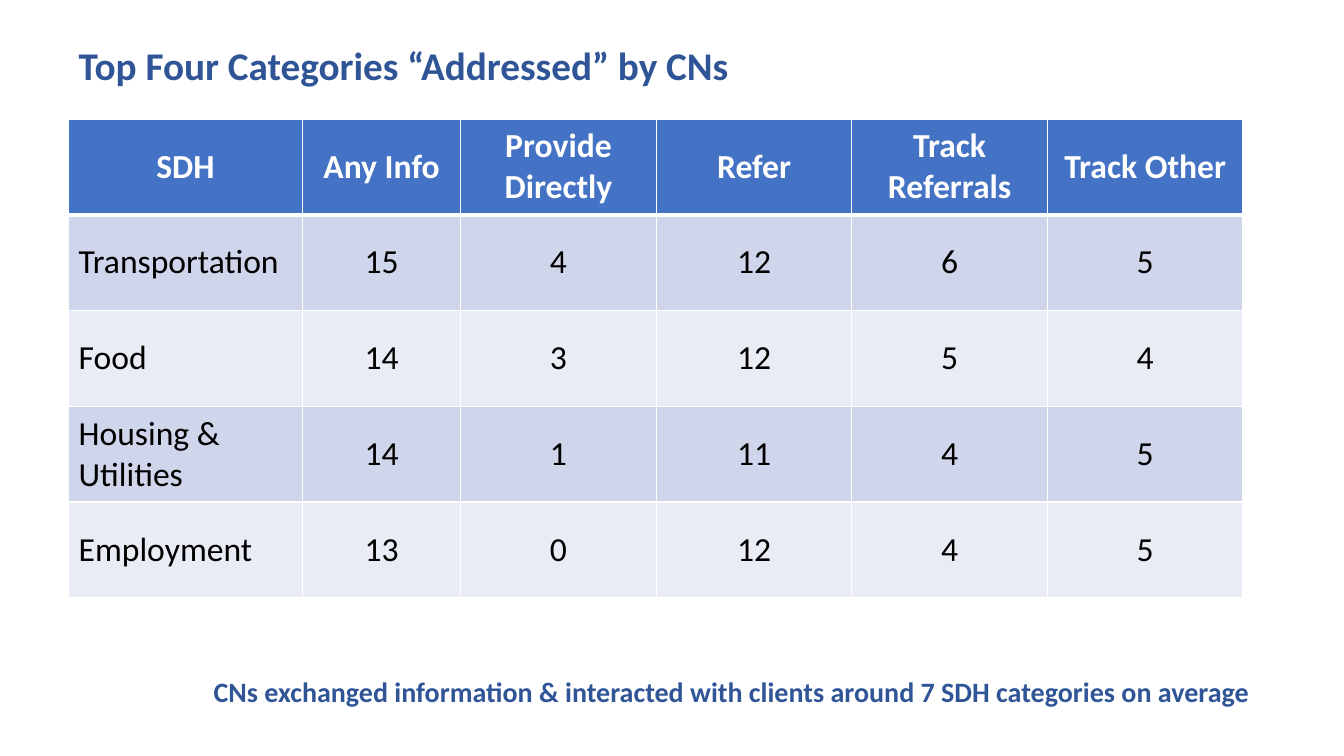
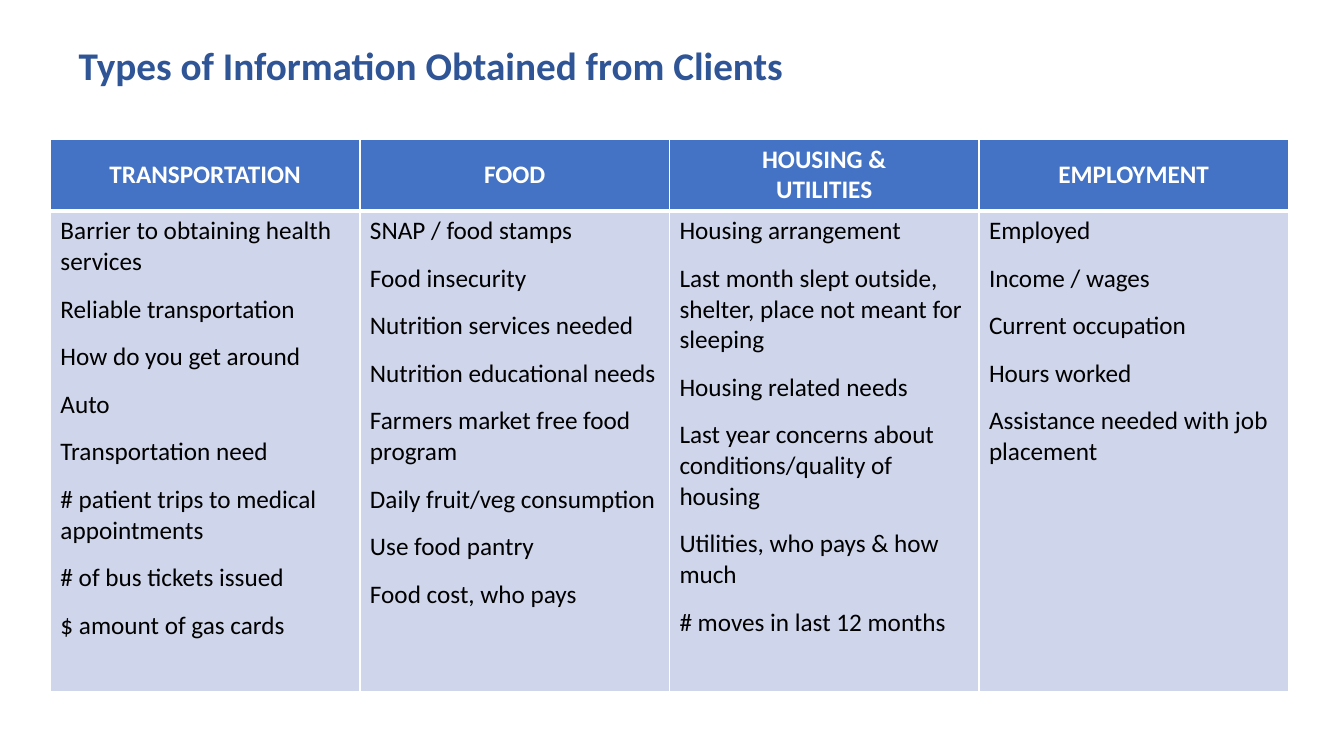
from dataclasses import dataclass

from lxml.etree import SubElement
from pptx import Presentation
from pptx.dml.color import RGBColor
from pptx.enum.text import MSO_ANCHOR, PP_ALIGN
from pptx.oxml.ns import qn
from pptx.util import Inches, Pt


@dataclass(frozen=True)
class Theme:
    """Colours, font and type sizes shared by the slides."""
    font: str = "Calibri"
    heading: str = "2F5597"
    header: str = "4472C4"
    bands: tuple = ("CFD5EA", "E9EBF5")
    ink: str = "000000"
    white: str = "FFFFFF"
    title_size: int = 28
    caption_size: int = 20
    count_size: int = 24
    detail_size: int = 18
    rule: int = 1
    header_rule: int = 3


THEME = Theme()

COUNT_HEADERS = ("SDH", "Any Info", "Provide Directly", "Refer",
                 "Track Referrals", "Track Other")
COUNTS = (
    ("Transportation", 15, 4, 12, 6, 5),
    ("Food", 14, 3, 12, 5, 4),
    ("Housing & Utilities", 14, 1, 11, 4, 5),
    ("Employment", 13, 0, 12, 4, 5),
)
INFORMATION = {
    "TRANSPORTATION": (
        "Barrier to obtaining health services", "Reliable transportation",
        "How do you get around", "Auto", "Transportation need",
        "# patient trips to medical appointments",
        "# of bus tickets issued", "$ amount of gas cards"),
    "FOOD": (
        "SNAP / food stamps", "Food insecurity", "Nutrition services needed",
        "Nutrition educational needs", "Farmers market free food program",
        "Daily fruit/veg consumption", "Use food pantry",
        "Food cost, who pays"),
    "HOUSING &\nUTILITIES": (
        "Housing arrangement",
        "Last month slept outside, shelter, place not meant for sleeping",
        "Housing related needs",
        "Last year concerns about conditions/quality of housing",
        "Utilities, who pays & how much", "# moves in last 12 months"),
    "EMPLOYMENT": (
        "Employed", "Income / wages", "Current occupation", "Hours worked",
        "Assistance needed with job placement"),
}


def write(frame, text, size, color, bold=False, align=PP_ALIGN.LEFT, after=0):
    """Fill a text frame and format every paragraph alike."""
    frame.text = text
    for paragraph in frame.paragraphs:
        paragraph.alignment = align
        paragraph.space_after = Pt(after)
        for run in paragraph.runs:
            run.font.name = THEME.font
            run.font.size = Pt(size)
            run.font.bold = bold
            run.font.color.rgb = RGBColor.from_string(color)


def paint_cell(cell, fill, top, bottom):
    """Give a cell white borders and a solid fill."""
    properties = cell._tc.get_or_add_tcPr()
    widths = {"L": THEME.rule, "R": THEME.rule, "T": top, "B": bottom}
    for side, width in widths.items():
        line = SubElement(properties, qn(f"a:ln{side}"), w=str(Pt(width)))
        SubElement(SubElement(line, qn("a:solidFill")), qn("a:srgbClr"),
                   val=THEME.white)
    cell.fill.solid()
    cell.fill.fore_color.rgb = RGBColor.from_string(fill)


def add_titled_slide(deck, text, width):
    """Add a title-only slide with its heading at the shared position."""
    slide = deck.slides.add_slide(deck.slide_layouts[5])
    title = slide.shapes.title
    title.left, title.top = Inches(0.68), Inches(0.36)
    title.width, title.height = Inches(width), Inches(0.57)
    write(title.text_frame, text, THEME.title_size, THEME.heading, bold=True)
    title.text_frame.word_wrap = False
    title.text_frame.vertical_anchor = MSO_ANCHOR.MIDDLE
    return slide


def add_banded_table(slide, left, top, widths, heights, headers, size):
    """Add a table with a painted grid and a written header row."""
    table = slide.shapes.add_table(
        len(heights), len(widths), Inches(left), Inches(top),
        Inches(sum(widths)), Inches(sum(heights))).table
    for column, width in zip(table.columns, widths):
        column.width = Inches(width)
    for index, (row, height) in enumerate(zip(table.rows, heights)):
        row.height = Inches(height)
        fill = THEME.bands[(index - 1) % 2] if index else THEME.header
        above = THEME.header_rule if index == 1 else THEME.rule
        below = THEME.rule if index else THEME.header_rule
        for cell in row.cells:
            paint_cell(cell, fill, above, below)
    for cell, header in zip(table.rows[0].cells, headers):
        cell.vertical_anchor = MSO_ANCHOR.MIDDLE
        write(cell.text_frame, header, size, THEME.white, bold=True,
              align=PP_ALIGN.CENTER)
    return table


def add_caption(slide, left, top, width, height, text):
    """Add the bold closing statement."""
    caption = slide.shapes.add_textbox(
        Inches(left), Inches(top), Inches(width), Inches(height))
    write(caption.text_frame, text, THEME.caption_size, THEME.heading, bold=True)
    caption.text_frame.word_wrap = False


def build_counts_slide(deck):
    """Build the slide counting how each category is addressed."""
    slide = add_titled_slide(deck, "Top Four Categories “Addressed” by CNs", 6.72)
    table = add_banded_table(
        slide, 0.68, 1.18, [2.32, 1.57] + [1.94] * 4,
        [0.95] * (len(COUNTS) + 1), COUNT_HEADERS, THEME.count_size)
    for row, values in enumerate(COUNTS, start=1):
        for column, value in enumerate(values):
            cell = table.cell(row, column)
            cell.vertical_anchor = MSO_ANCHOR.MIDDLE
            write(cell.text_frame, str(value), THEME.count_size, THEME.ink,
                  align=PP_ALIGN.CENTER if column else PP_ALIGN.LEFT)
    add_caption(slide, 2.02, 6.64, 10.56, 0.44,
                "CNs exchanged information & interacted with clients "
                "around 7 SDH categories on average")


def build_information_slide(deck):
    """Build the slide listing the information gathered per category."""
    slide = add_titled_slide(deck, "Types of Information Obtained from Clients", 7.27)
    table = add_banded_table(
        slide, 0.5, 1.38, [3.07] * len(INFORMATION), [0.7, 4.77],
        INFORMATION, THEME.detail_size)
    for cell, details in zip(table.rows[1].cells, INFORMATION.values()):
        write(cell.text_frame, "\n".join(details), THEME.detail_size,
              THEME.ink, after=12)


def main():
    """Build and save the deck."""
    deck = Presentation()
    deck.slide_width, deck.slide_height = Inches(13.33), Inches(7.5)
    build_counts_slide(deck)
    build_information_slide(deck)
    deck.save("out.pptx")


if __name__ == "__main__":
    main()
